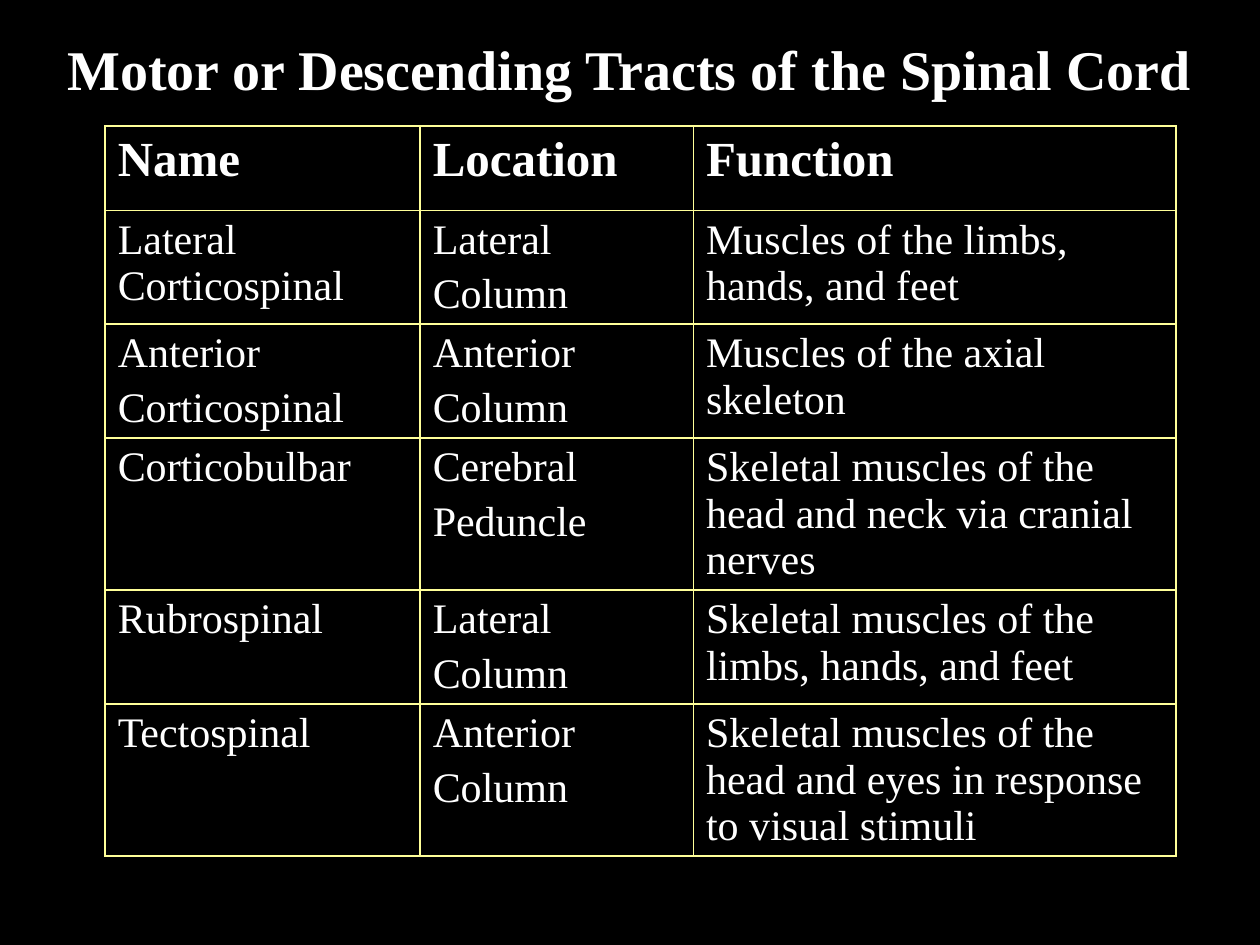
from lxml import etree
from pptx import Presentation
from pptx.dml.color import RGBColor
from pptx.enum.text import MSO_ANCHOR, PP_ALIGN
from pptx.oxml.ns import qn
from pptx.util import Cm, Pt

MIDDLE, CENTER = MSO_ANCHOR.MIDDLE, PP_ALIGN.CENTER
FONT = "Times New Roman"
BLACK, WHITE, YELLOW = "000000", "FFFFFF", "FFFF99"

# Content: each line of a cell is a paragraph
TITLE = "Motor or Descending Tracts of the Spinal Cord"
HEADINGS = ("Name", "Location", "Function")
TRACTS = [
    ("Lateral Corticospinal", "Lateral\nColumn",
     "Muscles of the limbs, hands, and feet"),
    ("Anterior\nCorticospinal", "Anterior\nColumn",
     "Muscles of the axial skeleton"),
    ("Corticobulbar", "Cerebral\nPeduncle",
     "Skeletal muscles of the head and neck via cranial nerves"),
    ("Rubrospinal", "Lateral\nColumn",
     "Skeletal muscles of the limbs, hands, and feet"),
    ("Tectospinal", "Anterior\nColumn",
     "Skeletal muscles of the head and eyes in response to visual stimuli"),
]
COLUMN_WIDTHS = (Cm(6.35), Cm(5.51), Cm(9.73))
HEADING_HEIGHT, TRACT_HEIGHT = Cm(1.7), Cm(1.9)


def paint(fill, color):
    fill.solid()
    fill.fore_color.rgb = RGBColor.from_string(color)


def add_run(paragraph, text, size, bold):
    run = paragraph.add_run()
    run.text = text
    run.font.name, run.font.size, run.font.bold = FONT, Pt(size), bold
    run.font.color.rgb = RGBColor.from_string(WHITE)


def add_borders(cell, color, width):
    properties = cell._tc.get_or_add_tcPr()
    for position, side in enumerate(("lnL", "lnR", "lnT", "lnB")):
        line = etree.Element(qn(f"a:{side}"), w=str(Pt(width)))
        fill = etree.SubElement(line, qn("a:solidFill"))
        etree.SubElement(fill, qn("a:srgbClr"), val=color)
        properties.insert(position, line)


def fill_cell(cell, text, size, bold):
    for number, line in enumerate(text.split("\n")):
        frame = cell.text_frame
        paragraph = frame.add_paragraph() if number else frame.paragraphs[0]
        paragraph.space_before = Pt(size * 0.2)
        add_run(paragraph, line, size, bold)
    paint(cell.fill, BLACK)
    add_borders(cell, YELLOW, 1)


def main():
    prs = Presentation()
    prs.slide_width, prs.slide_height = Cm(25.4), Cm(19.05)
    slide = prs.slides.add_slide(prs.slide_layouts[5])
    paint(slide.background.fill, BLACK)

    # Title
    title = slide.shapes.title
    title.left, title.top = Cm(0), Cm(0)
    title.width, title.height = prs.slide_width, Cm(2.75)
    title.text_frame.vertical_anchor = MIDDLE
    heading = title.text_frame.paragraphs[0]
    heading.alignment = CENTER
    add_run(heading, TITLE, 32, True)

    # Table of tracts
    rows = [HEADINGS, *TRACTS]
    heights = [HEADING_HEIGHT] + [TRACT_HEIGHT] * len(TRACTS)
    table = slide.shapes.add_table(
        len(rows), len(HEADINGS), Cm(2.12), Cm(2.54),
        sum(COLUMN_WIDTHS), sum(heights)).table
    for column, width in zip(table.columns, COLUMN_WIDTHS):
        column.width = width
    for row, height, texts in zip(table.rows, heights, rows):
        row.height = height
        is_heading = texts is HEADINGS
        for cell, text in zip(row.cells, texts):
            fill_cell(cell, text, 28 if is_heading else 24, is_heading)

    prs.save("out.pptx")


if __name__ == "__main__":
    main()
